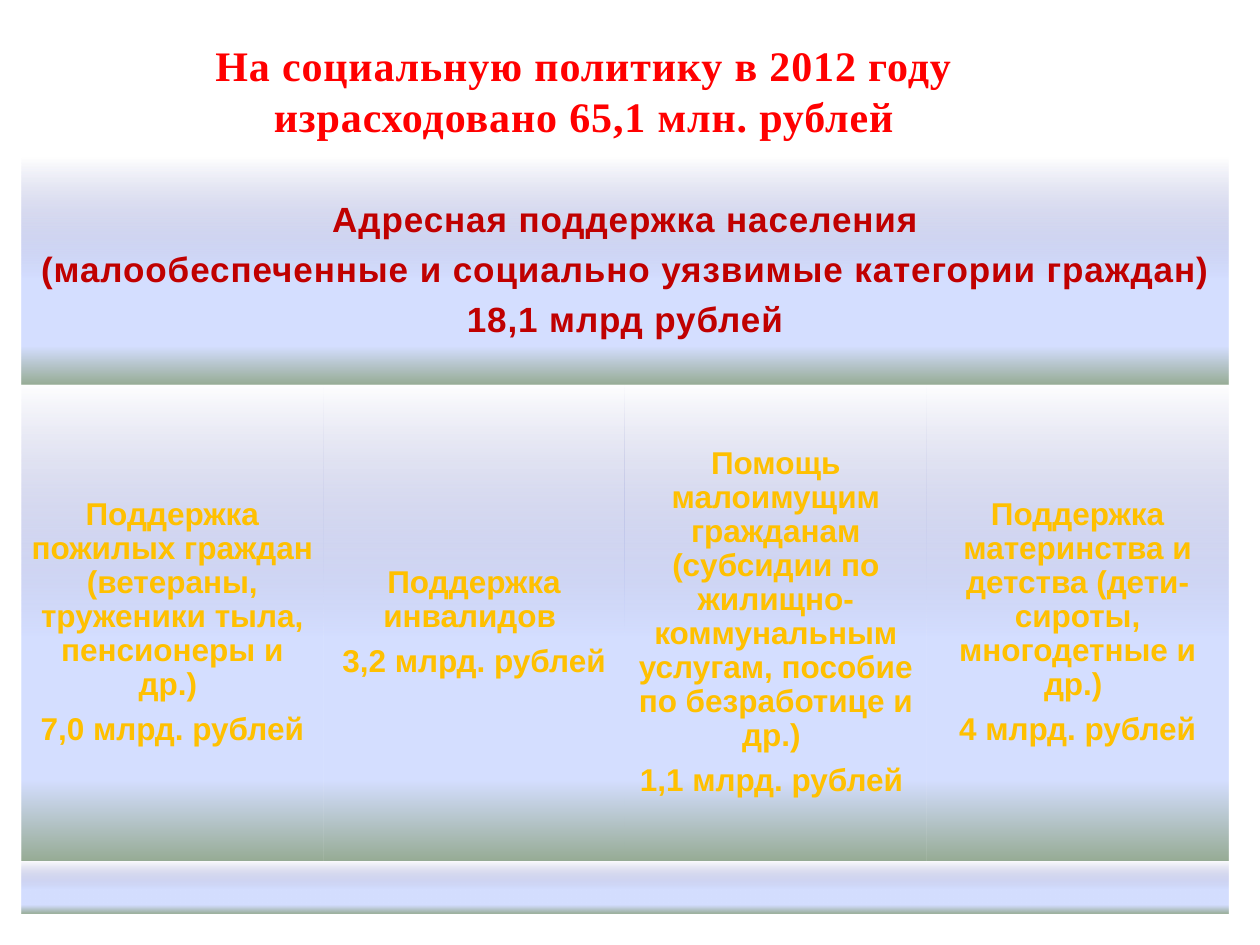
from dataclasses import dataclass

from lxml.etree import SubElement
from pptx import Presentation
from pptx.dml.color import RGBColor
from pptx.enum.shapes import MSO_SHAPE
from pptx.enum.text import MSO_ANCHOR, MSO_AUTO_SIZE, PP_ALIGN
from pptx.oxml.ns import qn
from pptx.util import Inches, Pt

LEFT, WIDTH = 0.17, 9.58
HEADER_TOP, HEADER_HEIGHT = 1.25, 1.8
COLUMN_TOP, COLUMN_HEIGHT = 3.05, 3.78
FOOTER_TOP, FOOTER_HEIGHT = 6.83, 0.42

# Position in percent, colour, opacity in percent
GRADIENT = [(0, "8488C4", 0), (53, "D4DEFF", 100), (83, "D4DEFF", 100), (100, "96AB94", 100)]


@dataclass
class TextStyle:
    font: str
    size: int
    color: str
    tracking: float = 0


@dataclass
class Support:
    purpose: str
    amount: str


TITLE = TextStyle("Times New Roman", 24, "FF0000", 0.5)
HEADER = TextStyle("Arial", 20, "C00000", 0.5)
COLUMN = TextStyle("Arial", 18, "FFC000")

HEADER_LINES = [
    "Адресная поддержка населения",
    "(малообеспеченные и социально уязвимые категории граждан)",
    "18,1 млрд рублей",
]
SUPPORTS = [
    Support("Поддержка пожилых граждан (ветераны, труженики тыла, пенсионеры и др.) ",
            "7,0 млрд. рублей"),
    Support("Поддержка инвалидов ", "3,2 млрд. рублей"),
    Support("Помощь малоимущим гражданам (субсидии по жилищно-коммунальным услугам, "
            "пособие по безработице и др.) ", "1,1 млрд. рублей "),
    Support("Поддержка материнства и детства (дети-сироты, многодетные и др.) ",
            "4 млрд. рублей"),
]


def color_of(value: str) -> RGBColor:
    return RGBColor.from_string(value)


def add_panel(slide, left: float, top: float, width: float, height: float):
    """Add a borderless rectangle whose gradient fades in from the top."""
    panel = slide.shapes.add_shape(MSO_SHAPE.RECTANGLE, Inches(left), Inches(top),
                                   Inches(width), Inches(height))
    panel.shadow.inherit = False
    panel.line.fill.background()
    panel.fill.gradient()
    panel.fill.gradient_angle = 270
    stops = panel._element.spPr.find(qn("a:gradFill")).find(qn("a:gsLst"))
    for stop in list(stops):
        stops.remove(stop)
    for position, color, opacity in GRADIENT:
        stop = SubElement(stops, qn("a:gs"), pos=str(position * 1000))
        tint = SubElement(stop, qn("a:srgbClr"), val=color)
        if opacity < 100:
            SubElement(tint, qn("a:alpha"), val=str(opacity * 1000))
    return panel


def write_paragraphs(frame, lines: list[str], style: TextStyle) -> None:
    frame.word_wrap = True
    frame.vertical_anchor = MSO_ANCHOR.MIDDLE
    for index, line in enumerate(lines):
        para = frame.paragraphs[0] if index == 0 else frame.add_paragraph()
        para.alignment = PP_ALIGN.CENTER
        span = para.add_run()
        span.text = line
        span.font.name = style.font
        span.font.size = Pt(style.size)
        span.font.bold = True
        span.font.color.rgb = color_of(style.color)
        if style.tracking:
            span._r.get_or_add_rPr().set("spc", str(int(style.tracking * 100)))


def fill_panel(panel, lines: list[str], style: TextStyle, inset: float) -> None:
    """Write tightly spaced lines into a panel with equal insets."""
    frame = panel.text_frame
    frame.margin_left = frame.margin_right = Inches(inset)
    frame.margin_top = frame.margin_bottom = Inches(inset)
    write_paragraphs(frame, lines, style)
    for para in frame.paragraphs:
        para.line_spacing = 0.9
        para.space_after = Pt(style.size * 0.35)


def main() -> None:
    deck = Presentation()
    deck.slide_width, deck.slide_height = Inches(10), Inches(7.5)
    slide = deck.slides.add_slide(deck.slide_layouts[6])

    title = slide.shapes.add_textbox(Inches(1.39), Inches(0.26), Inches(6.49), Inches(0.91))
    write_paragraphs(title.text_frame,
                     ["На социальную политику в 2012 году израсходовано 65,1 млн. рублей"], TITLE)
    title.text_frame.auto_size = MSO_AUTO_SIZE.SHAPE_TO_FIT_TEXT

    header = add_panel(slide, LEFT, HEADER_TOP, WIDTH, HEADER_HEIGHT)
    fill_panel(header, HEADER_LINES, HEADER, 0.08)

    column_width = WIDTH / len(SUPPORTS)
    for index, support in enumerate(SUPPORTS):
        column = add_panel(slide, LEFT + index * column_width, COLUMN_TOP,
                           column_width, COLUMN_HEIGHT)
        fill_panel(column, [support.purpose, support.amount], COLUMN, 0.07)

    add_panel(slide, LEFT, FOOTER_TOP, WIDTH, FOOTER_HEIGHT)
    deck.save("out.pptx")


if __name__ == "__main__":
    main()
